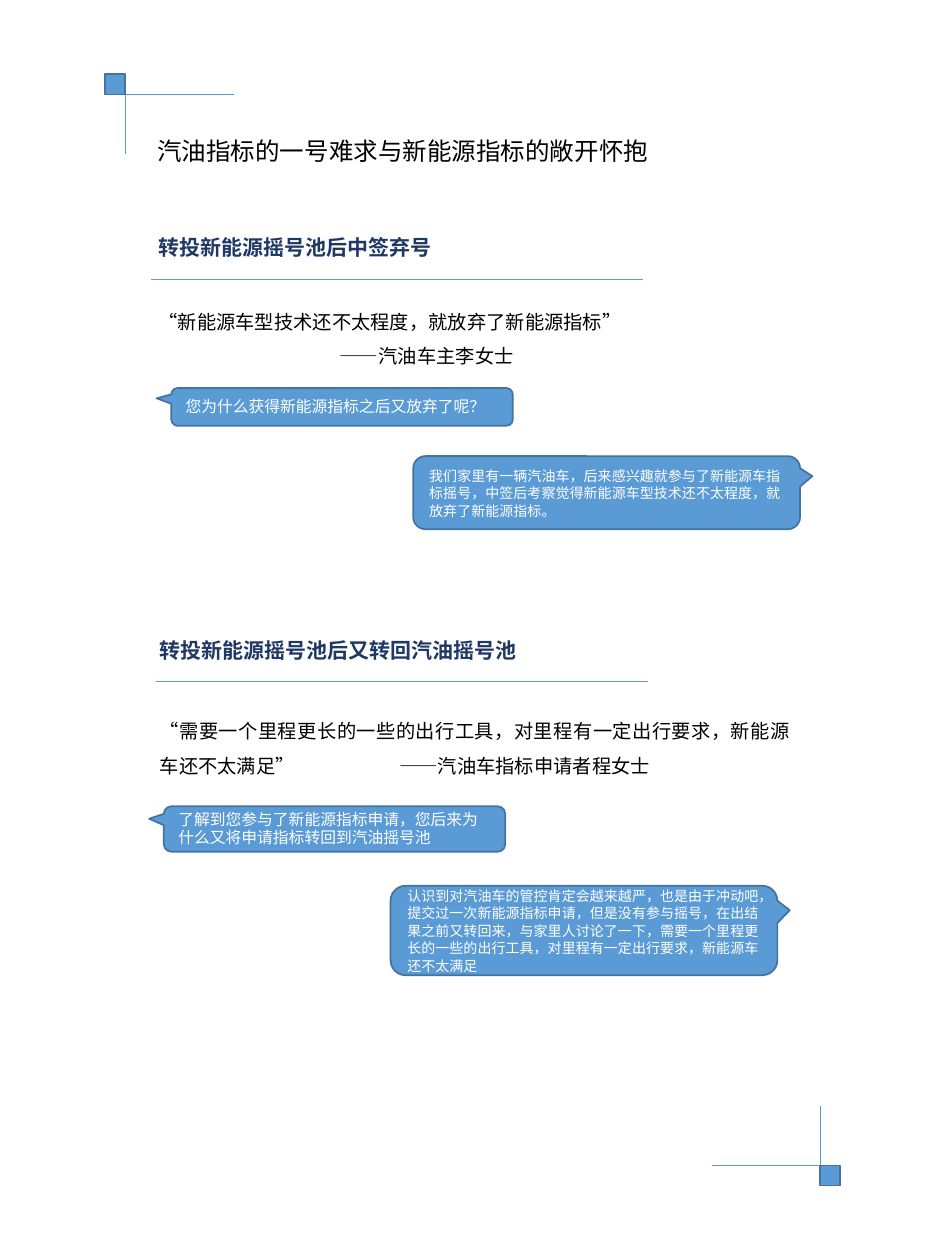
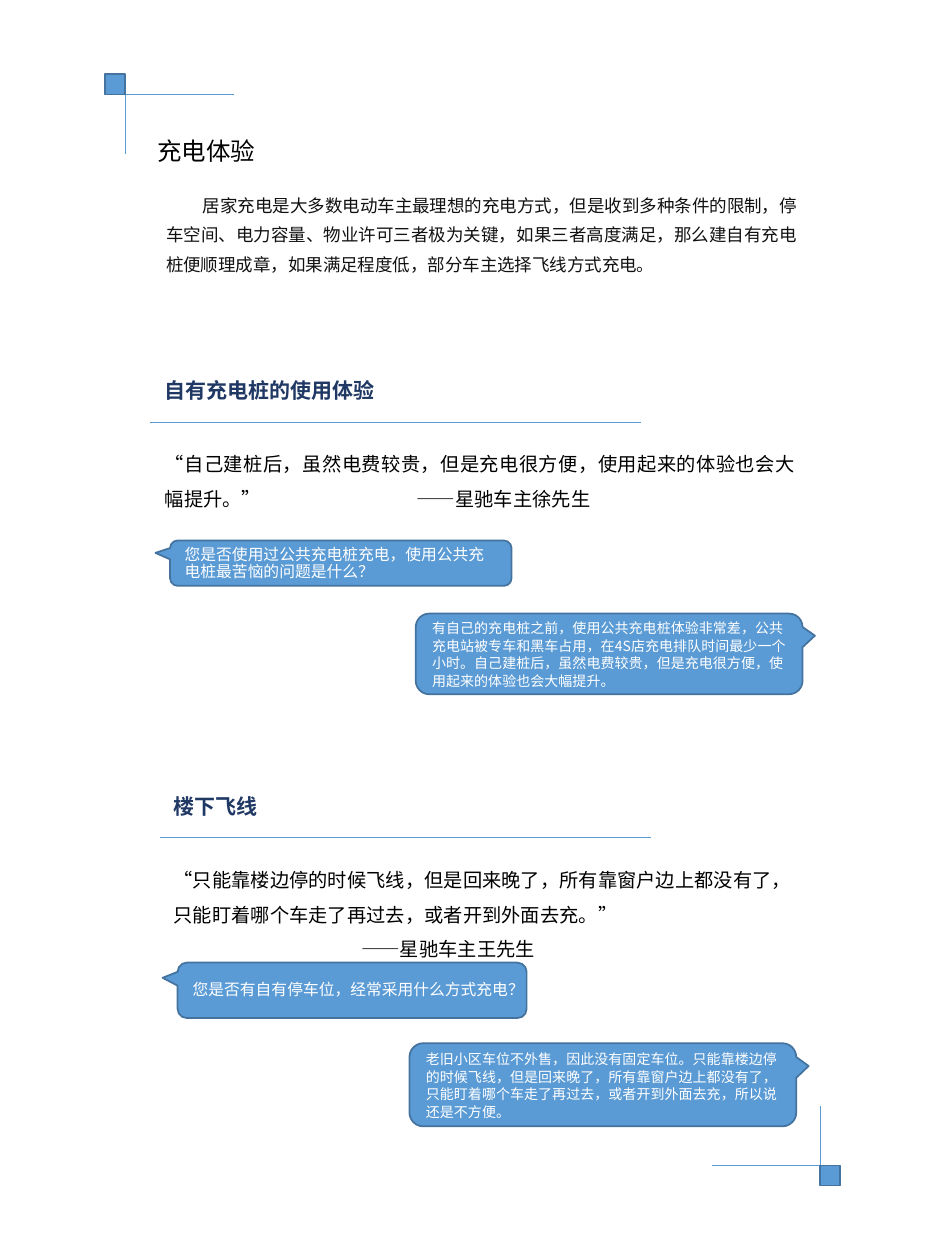
"""Build two interview pages of headed sections with quotes and speech bubbles."""
from pptx import Presentation, util as u
from pptx.dml.color import RGBColor
from pptx.enum import shapes, text
from pptx.oxml.ns import qn
from lxml import etree

BLUE = RGBColor(0x5B, 0x9B, 0xD5)
EDGE = RGBColor(0x43, 0x73, 0x9E)
NAVY = RGBColor(0x20, 0x38, 0x64)
BLACK = RGBColor(0, 0, 0)
INK = RGBColor(0x11, 0x11, 0x11)
WHITE = RGBColor(255, 255, 255)
FONT = "Noto Sans CJK SC"
COLS, ROWS = 75, 100


class Page:
    def __init__(self, deck):
        self.deck = deck
        self.cell_w = deck.slide_width / COLS
        self.cell_h = deck.slide_height / ROWS

    def start(self, title):
        self.slide = self.deck.slides.add_slide(self.deck.slide_layouts[6])
        self.corner(9.95, 7.5, 1)
        self.corner(65.1, 92.5, -1)
        self.label(11.5, 10.3, 43.3, 3.4, [title], 14)

    def place(self, *nums):
        return [round(n * (self.cell_h if i % 2 else self.cell_w))
                for i, n in enumerate(nums)]

    def paint(self, shape):
        shape.shadow.inherit = False
        shape.fill.solid()
        shape.fill.fore_color.rgb = BLUE
        shape.line.color.rgb = EDGE
        shape.line.width = u.Pt(1)

    def rule(self, x1, y1, x2, y2, host=None):
        line = (host or self.slide).shapes.add_connector(
            shapes.MSO_CONNECTOR.STRAIGHT, *self.place(x1, y1, x2, y2))
        line.line.color.rgb = BLUE
        line.line.width = u.Pt(0.5)
        etree.SubElement(line._element.spPr, qn("a:effectLst"))

    def corner(self, x, y, way):
        group = self.slide.shapes.add_group_shape()
        self.rule(x - 1.6 * way, y, x + 8.6 * way, y, group)
        self.rule(x, y - 1.6 * way, x, y + 4.7 * way, group)
        left, top = (x - 1.6, y - 1.6) if way > 0 else (x, y)
        self.paint(group.shapes.add_shape(
            shapes.MSO_SHAPE.RECTANGLE, *self.place(left, top, 1.6, 1.6)))

    def fill(self, frame, lines, size, color, gap=None, align=None, bold=None):
        frame.word_wrap = True
        frame.text = "\n".join(lines)
        for para in frame.paragraphs:
            para.font.name = FONT
            para.font.size = u.Pt(size)
            para.font.color.rgb = color
            para.font.bold = bold
            para.line_spacing = gap
            para.alignment = align
        return frame.paragraphs

    def label(self, x, y, w, h, lines, size, color=BLACK, **style):
        box = self.slide.shapes.add_textbox(*self.place(x, y, w, h))
        return self.fill(box.text_frame, lines, size, color, **style)

    def body(self, x, y, w, h, words):
        para, = self.label(x, y, w, h, [words], 10, INK, gap=1.4,
                           align=text.PP_ALIGN.JUSTIFY)
        para.font.name = "Arial"
        para._p.get_or_add_pPr().set("indent", str(u.Inches(0.29)))

    def quote(self, x, y, h, lines, stop, align=text.PP_ALIGN.JUSTIFY):
        for para in self.label(x, y, 52, h, lines, 11, gap=1.5, align=align):
            props = para._p.get_or_add_pPr()
            tabs = etree.Element(qn("a:tabLst"))
            etree.SubElement(tabs, qn("a:tab"), algn="l",
                             pos=str(self.place(stop)[0]))
            props.find(qn("a:defRPr")).addprevious(tabs)

    def section(self, x, y, head, start):
        self.label(x, y, 33, 3, [head], 12, NAVY, bold=True)
        self.rule(start, y + 4, start + 39, y + 4)

    def bubble(self, x, y, w, h, words, size, tip):
        shape = self.slide.shapes.add_shape(
            shapes.MSO_SHAPE.ROUNDED_RECTANGULAR_CALLOUT, *self.place(x, y, w, h))
        self.paint(shape)
        for i, n in enumerate((tip, -0.226, 0.167)):
            shape.adjustments[i] = n
        shape.text_frame.vertical_anchor = text.MSO_ANCHOR.MIDDLE
        self.fill(shape.text_frame, [words], size, WHITE, u.Pt(10),
                  text.PP_ALIGN.LEFT)

    def ask(self, x, y, h, words, w=27.1):
        self.bubble(x, y, w, h, words, 9, -0.543)

    def reply(self, x, y, h, words):
        self.bubble(x, y, 30.7, h, words, 8, 0.532)


def main():
    deck = Presentation()
    deck.slide_width, deck.slide_height = u.Inches(7.5), u.Inches(10)
    page = Page(deck)

    page.start("汽油指标的一号难求与新能源指标的敞开怀抱")
    page.section(11.6, 18.15, "转投新能源摇号池后中签弃号", 12)
    page.quote(11.6, 23.2, 6.6, ["“新能源车型技术还不太程度，就放弃了新能源指标”",
                                 "\t——汽油车主李女士"], 14.4)
    page.ask(13.6, 30.8, 3, "您为什么获得新能源指标之后又放弃了呢？")
    page.reply(32.8, 36.2, 5.8, "我们家里有一辆汽油车，后来感兴趣就参与了新能源车指标摇号，"
               "中签后考察觉得新能源车型技术还不太程度，就放弃了新能源指标。")
    page.section(11.7, 50.1, "转投新能源摇号池后又转回汽油摇号池", 12.4)
    page.quote(11.7, 55.7, 6.6, ["“需要一个里程更长的一些的出行工具，对里程有一定出行要求，"
                                 "新能源车还不太满足”\t——汽油车指标申请者程女士"], 19)
    page.ask(13, 64, 3.6, "了解到您参与了新能源指标申请，您后来为什么又将申请指标转回到汽油摇号池")
    page.reply(31, 70.3, 7.1, "认识到对汽油车的管控肯定会越来越严，也是由于冲动吧，"
               "提交过一次新能源指标申请，但是没有参与摇号，在出结果之前又转回来，"
               "与家里人讨论了一下，需要一个里程更长的一些的出行工具，"
               "对里程有一定出行要求，新能源车还不太满足")

    page.start("充电体验")
    page.body(12.2, 14.3, 52, 8.1, "居家充电是大多数电动车主最理想的充电方式，"
              "但是收到多种条件的限制，停车空间、电力容量、物业许可三者极为关键，"
              "如果三者高度满足，那么建自有充电桩便顺理成章，如果满足程度低，"
              "部分车主选择飞线方式充电。")
    page.section(12.1, 29.5, "自有充电桩的使用体验", 11.9)
    page.quote(12.1, 34.5, 6.1, ["“自己建桩后，虽然电费较贵，但是充电很方便，"
                                 "使用起来的体验也会大幅提升。”\t——星驰车主徐先生"], 20)
    page.ask(13.5, 42.9, 3.6, "您是否使用过公共充电桩充电，使用公共充电桩最苦恼的问题是什么？")
    page.reply(33, 48.7, 6.4, "有自己的充电桩之前，使用公共充电桩体验非常差，"
               "公共充电站被专车和黑车占用，在4S店充电排队时间最少一个小时。"
               "自己建桩后，虽然电费较贵，但是充电很方便，使用起来的体验也会大幅提升。")
    page.section(12.8, 62.5, "楼下飞线", 12.7)
    page.quote(12.8, 67.5, 9.3, ["“只能靠楼边停的时候飞线，但是回来晚了，所有靠窗户边上都没有了，"
                                 "只能盯着哪个车走了再过去，或者开到外面去充。”",
                                 "\t——星驰车主王先生"], 14.9, text.PP_ALIGN.LEFT)
    page.ask(14.1, 76.4, 4.4, "您是否有自有停车位，经常采用什么方式充电？", 27.7)
    page.reply(32.5, 82.8, 6.6, "老旧小区车位不外售，因此没有固定车位。"
               "只能靠楼边停的时候飞线，但是回来晚了，所有靠窗户边上都没有了，"
               "只能盯着哪个车走了再过去，或者开到外面去充，所以说还是不方便。")
    deck.save("out.pptx")


if __name__ == "__main__":
    main()
